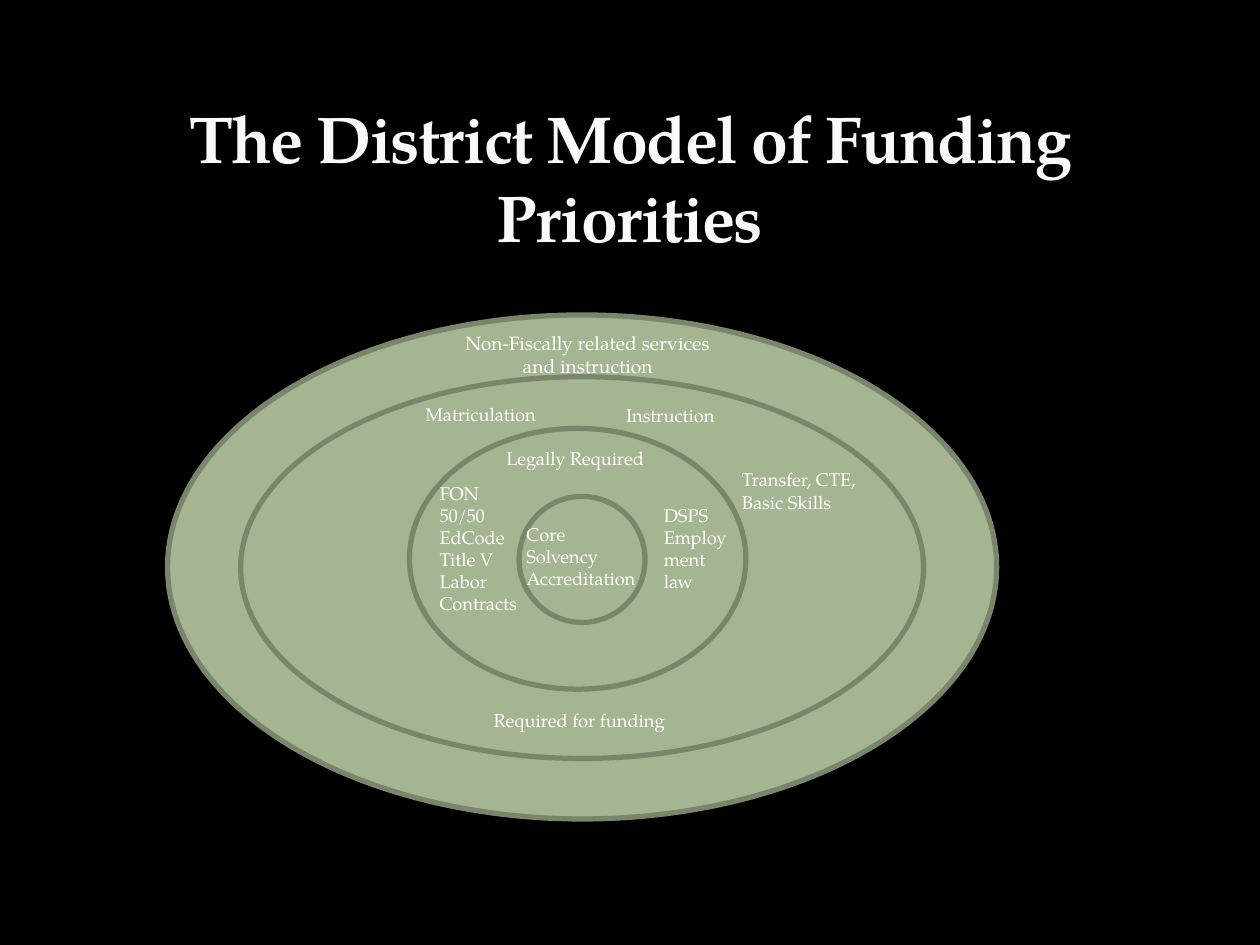
from pptx import Presentation
from pptx import util as u
from pptx.dml.color import RGBColor
from pptx.enum import shapes, text

BLACK = RGBColor(0x00, 0x00, 0x00)
WHITE = RGBColor(0xFF, 0xFF, 0xFF)
PALE = RGBColor(0xF9, 0xF9, 0xF9)
SAGE = RGBColor(0xA5, 0xB5, 0x92)
MOSS = RGBColor(0x7A, 0x86, 0x6C)


class Deck:
    """Holds the style and the current slide."""
    font = "TeX Gyre Pagella"

    def __init__(self, prs):
        self.slide = prs.slides.add_slide(prs.slide_layouts[6])
        fill = self.slide.background.fill
        fill.solid()
        fill.fore_color.rgb = BLACK

    def ring(self, *box):
        oval = self.slide.shapes.add_shape(
            shapes.MSO_SHAPE.OVAL, *map(u.Inches, box))
        oval.shadow.inherit = False
        oval.fill.solid()
        oval.fill.fore_color.rgb = SAGE
        oval.line.color.rgb = MOSS
        oval.line.width = u.Pt(3)

    def label(self, box, *paras, size=10.5, align=text.PP_ALIGN.LEFT):
        """Each paragraph is a string; a newline in it is a line break."""
        frame = self.slide.shapes.add_textbox(*map(u.Inches, box)).text_frame
        frame.word_wrap = True
        for i, words in enumerate(paras):
            para = frame.add_paragraph() if i else frame.paragraphs[0]
            para.alignment = align
            for j, line in enumerate(words.split("\n")):
                if j:
                    para.add_line_break()
                self.run(para, line, size, WHITE)
        return frame

    def run(self, para, words, size, color):
        run = para.add_run()
        run.text = words
        run.font.name = self.font
        run.font.size = u.Pt(size)
        run.font.color.rgb = color
        return run

    def title(self, box, words):
        frame = self.slide.shapes.add_textbox(*map(u.Inches, box)).text_frame
        frame.word_wrap = True
        frame.vertical_anchor = text.MSO_ANCHOR.BOTTOM
        para = frame.paragraphs[0]
        para.alignment = text.PP_ALIGN.CENTER
        font = self.run(para, words, 37.8, PALE).font
        font.bold = True
        font._element.set("spc", "-100")  # tighten by one point


def main():
    prs = Presentation()
    prs.slide_width, prs.slide_height = u.Inches(10), u.Inches(7.5)
    deck = Deck(prs)
    deck.title((0.5, 0.75, 9, 1.33), "The District Model of Funding Priorities")

    # Outer ring: services without fiscal ties
    deck.ring(1.33, 2.5, 6.58, 4)
    deck.label((3.5, 2.58, 2.33, 0.47),
               "Non-Fiscally related services and instruction",
               size=11, align=text.PP_ALIGN.CENTER)

    # Second ring: required for funding
    deck.ring(1.91, 2.99, 5.42, 3.03)
    deck.label((3.28, 3.15, 1.08, 0.28), "Matriculation")
    deck.label((4.87, 3.16, 0.92, 0.28), "Instruction")
    deck.label((3.82, 5.58, 1.68, 0.28), "Required for funding")
    deck.label((5.79, 3.67, 1.13, 0.45), "Transfer, CTE, Basic Skills")

    # Third ring: legally required
    deck.ring(3.25, 3.4, 2.67, 2.07)
    deck.label((3.92, 3.5, 1.33, 0.28), "Legally Required")
    deck.label((3.39, 3.78, 0.86, 1.16),
               "FON\n50/50", "EdCode\nTitle V\nLabor Contracts")
    deck.label((5.17, 3.95, 0.75, 0.81), "DSPS\nEmployment law")

    # Core
    deck.ring(4.12, 3.94, 1, 1)
    deck.label((4.08, 4.1, 1.16, 0.63), "Core\nSolvency\nAccreditation")

    prs.save("out.pptx")


if __name__ == "__main__":
    main()
